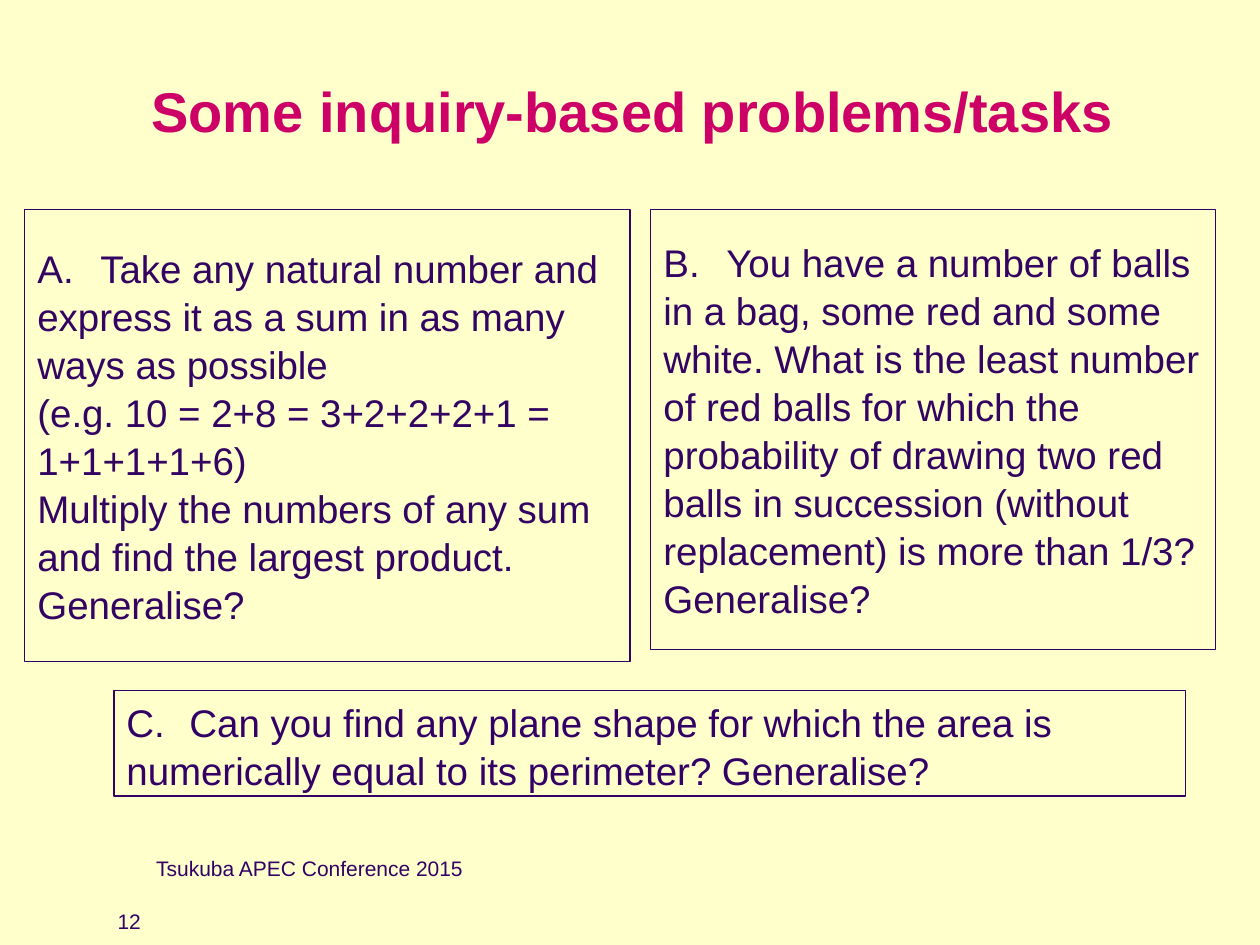
"""Build a slide of three inquiry-based maths tasks."""
from lxml import etree
from pptx import Presentation
from pptx.dml.color import RGBColor
from pptx.enum.text import MSO_ANCHOR, MSO_AUTO_SIZE, PP_ALIGN
from pptx.oxml.ns import qn
from pptx.util import Cm, Pt

MID, TOP = MSO_ANCHOR.MIDDLE, MSO_ANCHOR.TOP
NONE = MSO_AUTO_SIZE.NONE
LEFT, CENTER = PP_ALIGN.LEFT, PP_ALIGN.CENTER
HUES = {"page": "FFFFCC", "title": "CC0066", "task": "330461", "ink": "330066"}


def place(shape, box, anchor):
    shape.left, shape.top, shape.width, shape.height = [Cm(n) for n in box]
    frame = shape.text_frame
    frame.word_wrap = True
    frame.auto_size = NONE
    frame.vertical_anchor = anchor
    return frame.paragraphs[0]


def write(para, text, size, hue, bold=False):
    run = para.add_run()
    run.text = text
    run.font.name = "Arial"
    run.font.size = Pt(size)
    run.font.bold = bold
    run.font.color.rgb = RGBColor.from_string(HUES[hue])


deck = Presentation()
deck.slide_width, deck.slide_height = Cm(25.4), Cm(19.05)
slide = deck.slides.add_slide(deck.slide_layouts[3])
fill = slide.background.fill
fill.solid()
fill.fore_color.rgb = RGBColor.from_string(HUES["page"])
shapes = slide.shapes
title, left, right = slide.placeholders

para = place(title, (2.12, 0.85, 21.59, 2.75), MID)
para.alignment = CENTER
write(para, "Some inquiry-based problems/tasks ", 32, "title", True)

notes = [
    ((2.9, 17.12, 15.88, 1.06), "Tsukuba APEC Conference 2015"),
    ((2.12, 18.2, 1.7, 0.54), "12"),
]
for box, text in notes:
    note = shapes.add_textbox(0, 0, 0, 0)
    write(place(note, box, TOP), text, 12, "ink")

base = shapes.add_textbox(0, 0, 0, 0)
tasks = [
    (left, (0.5, 4.23, 12.2, 9.1), MID, "task", "A.", [
        "Take any natural number and express it as a sum in as many ways as possible ",
        "(e.g. 10 = 2+8 = 3+2+2+2+1 = 1+1+1+1+6)",
        "Multiply the numbers of any sum and find the largest product. Generalise?",
    ]),
    (right, (13.12, 4.23, 11.38, 8.86), MID, "task", "B.", [
        "You have a number of balls in a bag, some red and some white. "
        "What is the least number of red balls for which the probability of drawing "
        "two red balls in succession (without replacement) is more than 1/3? Generalise?",
    ]),
    (base, (2.3, 13.92, 21.6, 2.13), TOP, "ink", "C.", [
        "Can you find any plane shape for which the area is "
        "numerically equal to its perimeter? Generalise?",
    ]),
]
for shape, box, anchor, hue, mark, lines in tasks:
    para = place(shape, box, anchor)
    shape.line.color.rgb = RGBColor.from_string(HUES["ink"])
    shape.line.width = Pt(0.75)
    para.alignment = LEFT
    para.line_spacing = 1.04
    para.space_before = Pt(0)
    props = para._p.get_or_add_pPr()
    props.set("marL", "0")
    props.set("indent", "0")
    etree.SubElement(props, qn("a:buNone"))
    tabs = etree.SubElement(props, qn("a:tabLst"))
    etree.SubElement(tabs, qn("a:tab"), pos=str(Cm(1.37)), algn="l")
    write(para, mark + "\t", 22, hue)
    for rank, line in enumerate(lines):
        if rank:
            para.add_line_break()
        write(para, line, 22, hue)

deck.save("out.pptx")
